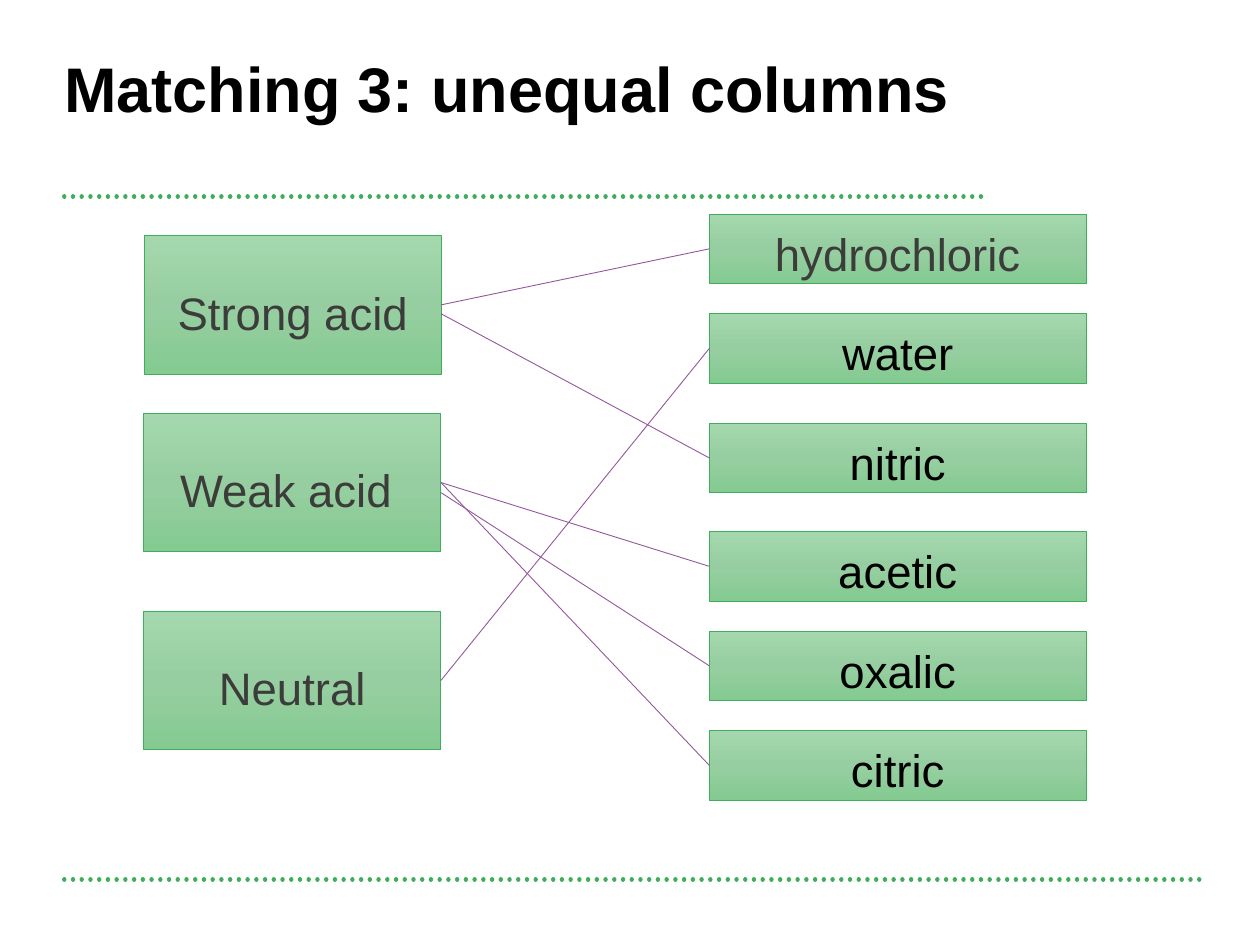
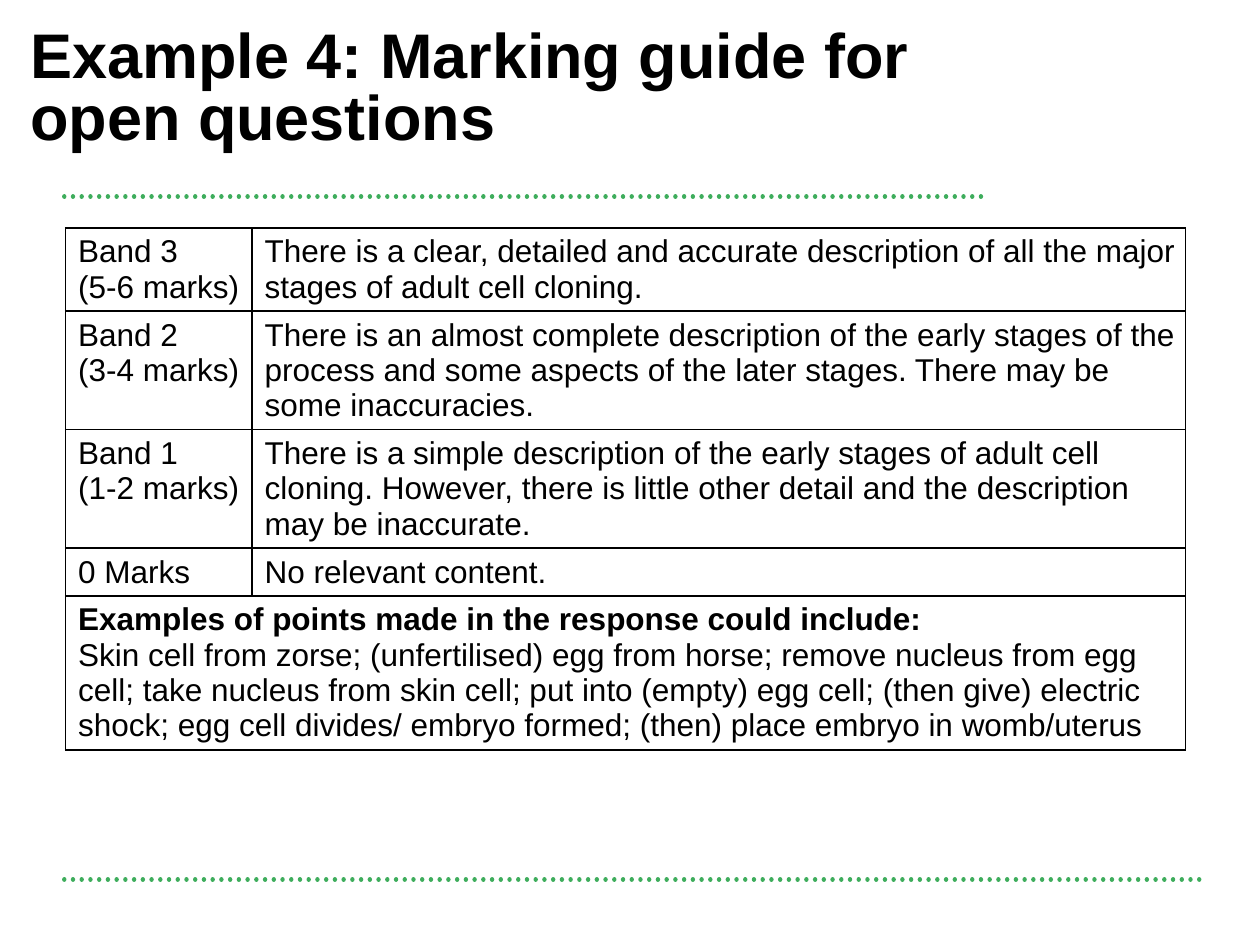
import copy
from dataclasses import dataclass

import pptx
import pptx.dml.color
import pptx.enum.dml
import pptx.enum.shapes
import pptx.enum.text
import pptx.oxml
import pptx.oxml.ns
import pptx.util

EMU_PER_PX = 9144  # 100 px to the inch
TITLE_ONLY = 5
LEFT_SIDE, RIGHT_SIDE = 1, 3


@dataclass(frozen=True)
class Theme:
    font: str = "Arial"
    black: str = "000000"
    white: str = "FFFFFF"
    charcoal: str = "3C3C3B"
    green: str = "3EAD5C"
    purple: str = "95569E"
    gradient: tuple = ("A4D7AD", "97CEA1", "84CA91")
    title_size: int = 36
    title_spacing: int = 35
    label_size: int = 26
    table_size: int = 18
    rule_width: float = 2.5
    thin_width: float = 0.5
    border_width: int = 1


def px(length):
    return pptx.util.Emu(length * EMU_PER_PX)


def rgb(color):
    return pptx.dml.color.RGBColor.from_string(color)


class Painter:
    """Holds the style and the current slide."""

    def __init__(self, deck, theme):
        self.deck = deck
        self.theme = theme
        self.page = None

    def start_page(self, title, left, top, width):
        self.page = self.deck.slides.add_slide(self.deck.slide_layouts[TITLE_ONLY])
        # Dotted rules under the title and above the footer
        for right, y in ((953, 698), (780, 156)):
            self.rule(51, right, y)
        box = self.page.shapes.title
        box.left, box.top, box.width, box.height = map(px, (left, top, width, 98))
        frame = box.text_frame
        frame.text = title
        frame.word_wrap = True
        frame.auto_size = pptx.enum.text.MSO_AUTO_SIZE.NONE
        frame.vertical_anchor = pptx.enum.text.MSO_ANCHOR.TOP
        self.set_margins(frame, 0, 0, 0, 0)
        para = frame.paragraphs[0]
        para.alignment = pptx.enum.text.PP_ALIGN.LEFT
        para.line_spacing = pptx.util.Pt(self.theme.title_spacing)
        self.format_runs(para, self.theme.title_size, self.theme.black, bold=True)

    def set_margins(self, frame, left, top, right, bottom):
        frame.margin_left, frame.margin_top = px(left), px(top)
        frame.margin_right, frame.margin_bottom = px(right), px(bottom)

    def format_runs(self, para, size, color, bold=False):
        for span in para.runs:
            span.font.name = self.theme.font
            span.font.size = pptx.util.Pt(size)
            span.font.bold = bold
            span.font.color.rgb = rgb(color)

    def line(self, start, end, color, width):
        line = self.page.shapes.add_connector(
            pptx.enum.shapes.MSO_CONNECTOR.STRAIGHT, *map(px, start + end))
        line.line.color.rgb = rgb(color)
        line.line.width = pptx.util.Pt(width)
        line._element.spPr.append(pptx.oxml.parse_xml(
            f'<a:effectLst {pptx.oxml.ns.nsdecls("a")}/>'))
        return line

    def rule(self, left, right, y):
        rule = self.line((left, y), (right, y), self.theme.green, self.theme.rule_width)
        rule.line.dash_style = pptx.enum.dml.MSO_LINE.ROUND_DOT
        rule._element.spPr.find(pptx.oxml.ns.qn("a:ln")).set("cap", "rnd")

    def card(self, text, left, top, width, height, inset_top, color):
        card = self.page.shapes.add_shape(
            pptx.enum.shapes.MSO_SHAPE.RECTANGLE, *map(px, (left, top, width, height)))
        card.shadow.inherit = False
        card.line.color.rgb = rgb(self.theme.green)
        card.line.width = pptx.util.Pt(self.theme.thin_width)
        self.fill_gradient(card)
        frame = card.text_frame
        frame.text = text
        frame.word_wrap = True
        frame.vertical_anchor = pptx.enum.text.MSO_ANCHOR.TOP
        self.set_margins(frame, 10, inset_top, 10, 0)
        para = frame.paragraphs[0]
        para.alignment = pptx.enum.text.PP_ALIGN.CENTER
        self.format_runs(para, self.theme.label_size, color)
        return card

    def fill_gradient(self, card):
        card.fill.gradient()
        card.fill.gradient_angle = 270
        # The default gradient has two stops; add a middle one
        stops = next(card._element.spPr.iter(pptx.oxml.ns.qn("a:gsLst")))
        stops.insert(1, copy.deepcopy(stops[0]))
        for index, (stop, color) in enumerate(
                zip(card.fill.gradient_stops, self.theme.gradient)):
            stop.position = index / 2
            stop.color.rgb = rgb(color)

    def match(self, category, answer, drop):
        """Join two cards; a drop starts the line below the side's middle."""
        start = (category.left + category.width, category.top + category.height // 2)
        start = tuple(length // EMU_PER_PX for length in start)
        line = self.line((start[0], start[1] + drop), start,
                         self.theme.purple, self.theme.thin_width)
        if not drop:
            line.begin_connect(category, RIGHT_SIDE)
        line.end_connect(answer, LEFT_SIDE)

    def table(self, rows, left, top, widths, heights):
        frame = self.page.shapes.add_table(
            len(rows), len(widths),
            *map(px, (left, top, sum(widths), sum(heights))))
        table = frame.table
        table.first_row = table.horz_banding = False
        for column, width in zip(table.columns, widths):
            column.width = px(width)
        for row, height, texts in zip(table.rows, heights, rows):
            row.height = px(height)
            for cell, text in zip(row.cells, texts):
                self.format_cell(cell, text)
        return table

    def format_cell(self, cell, text):
        self.set_margins(cell, 10, 5, 8, 5)
        properties = cell._tc.get_or_add_tcPr()
        width = pptx.util.Pt(self.theme.border_width)
        for side in ("lnL", "lnR", "lnT", "lnB"):
            properties.append(pptx.oxml.parse_xml(
                f'<a:{side} {pptx.oxml.ns.nsdecls("a")} w="{width}"><a:solidFill>'
                f'<a:srgbClr val="{self.theme.black}"/></a:solidFill></a:{side}>'))
        cell.fill.solid()
        cell.fill.fore_color.rgb = rgb(self.theme.white)
        cell.text = text
        for para in cell.text_frame.paragraphs:
            self.format_runs(para, self.theme.table_size, self.theme.black)


def build_matching(painter):
    painter.start_page("Matching 3: unequal columns", 51, 51, 729)
    theme = painter.theme

    # Categories share a right edge
    categories = {}
    for text, left, top in (("Strong acid", 115, 187), ("Weak acid ", 114, 328),
                            ("Neutral", 114, 485)):
        categories[text.strip()] = painter.card(
            text, left, top, 350 - left, 110, 39, theme.charcoal)

    # Answers, each with its category and the drop of its line's start
    answers = (
        ("hydrochloric", 170, "Strong acid", 0),
        ("water", 249, "Neutral", 0),
        ("nitric", 336, "Strong acid", 7),
        ("acetic", 422, "Weak acid", 0),
        ("oxalic", 501, "Weak acid", 8),
        ("citric", 580, "Weak acid", 0),
    )
    for text, top, category, drop in answers:
        color = theme.charcoal if text == "hydrochloric" else theme.black
        answer = painter.card(text, 563, top, 299, 55, 9, color)
        painter.match(categories[category], answer, drop)


def build_marking_guide(painter):
    painter.start_page("Example 4: Marking guide for open questions", 24, 24, 746)
    rows = (
        ("Band 3\n(5-6 marks)",
         "There is a clear, detailed and accurate description of all the major "
         "stages of adult cell cloning."),
        ("Band 2\n(3-4 marks)",
         "There is an almost complete description of the early stages of the "
         "process and some aspects of the later stages. There may be some "
         "inaccuracies."),
        ("Band 1\n(1-2 marks)",
         "There is a simple description of the early stages of adult cell "
         "cloning. However, there is little other detail and the description "
         "may be inaccurate."),
        ("0 Marks", "No relevant content."),
        ("Examples of points made in the response could include:\n"
         "Skin cell from zorse; (unfertilised) egg from horse; remove nucleus "
         "from egg cell; take nucleus from skin cell; put into (empty) egg cell; "
         "(then give) electric shock; egg cell divides/ embryo formed; (then) "
         "place embryo in womb/uterus", ""),
    )
    table = painter.table(rows, 52, 181, (148, 741), (66, 94, 94, 38, 122))

    # The last row spans both columns under a bold heading
    examples = table.cell(4, 0)
    examples.merge(table.cell(4, 1))
    examples.text_frame.paragraphs[0].runs[0].font.bold = True


def main():
    deck = pptx.Presentation()
    deck.slide_width, deck.slide_height = px(1000), px(750)
    painter = Painter(deck, Theme())
    build_matching(painter)
    build_marking_guide(painter)
    deck.save("out.pptx")


if __name__ == "__main__":
    main()
